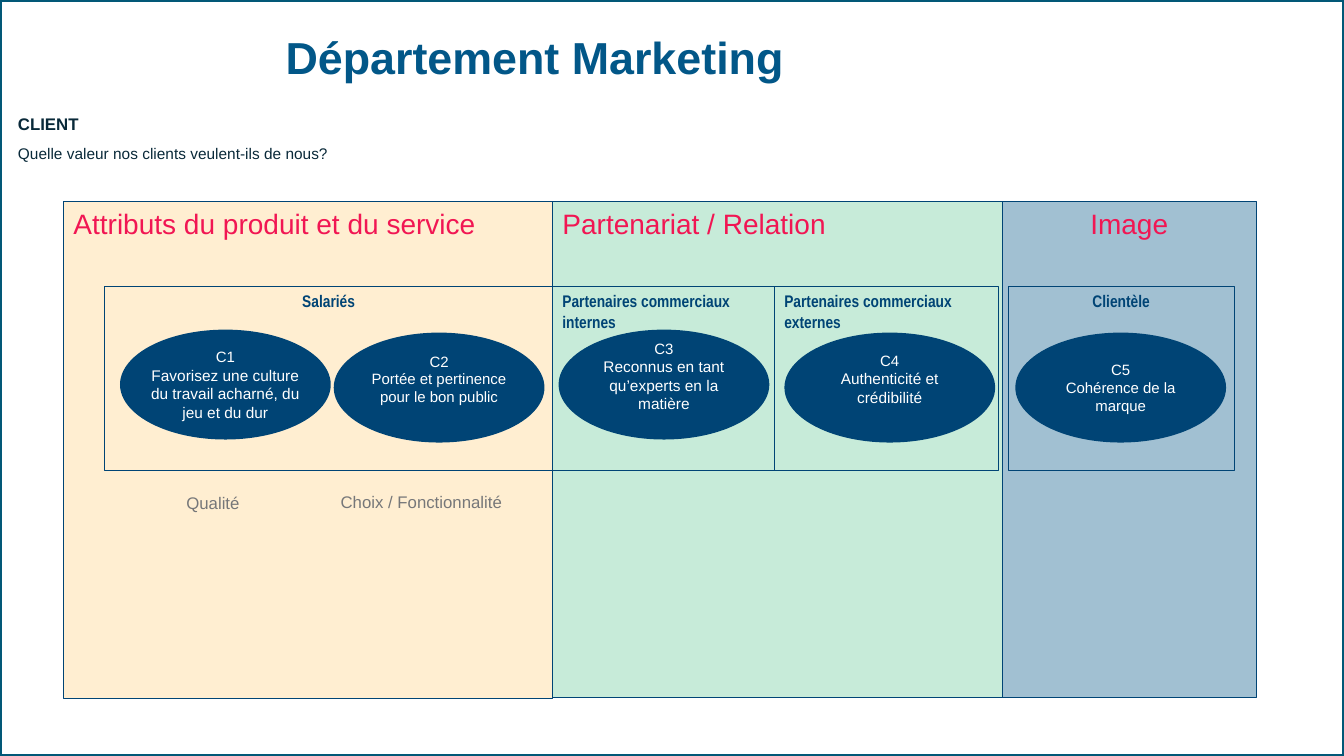
"""Build the customer value slide of the marketing department."""
import pptx
import pptx.dml.color
import pptx.enum.shapes
import pptx.enum.text
import pptx.oxml
import pptx.oxml.ns
import pptx.util

Inches = pptx.util.Inches
Pt = pptx.util.Pt
RECT = pptx.enum.shapes.MSO_SHAPE.RECTANGLE
OVAL = pptx.enum.shapes.MSO_SHAPE.OVAL
TOP = pptx.enum.text.MSO_ANCHOR.TOP
MIDDLE = pptx.enum.text.MSO_ANCHOR.MIDDLE
LEFT = pptx.enum.text.PP_ALIGN.LEFT
CENTER = pptx.enum.text.PP_ALIGN.CENTER
NAVY = "004475"


def rgb(value):
    return pptx.dml.color.RGBColor.from_string(value)


def write(sp, lines, color, align=LEFT, anchor=TOP, wrap=True, name="Arial", bold=False):
    tf = sp.text_frame
    tf.word_wrap = wrap
    tf.vertical_anchor = anchor
    for i, (text, size) in enumerate(lines):
        p = tf.add_paragraph() if i else tf.paragraphs[0]
        p.alignment = align
        r = p.add_run()
        r.text = text
        for key, value in {"name": name, "size": Pt(size), "bold": bold}.items():
            setattr(r.font, key, value)
        r.font.color.rgb = rgb(color)


prs = pptx.Presentation()
prs.slide_width = Inches(13.33)
prs.slide_height = Inches(7.5)
s = prs.slides.add_slide(prs.slide_layouts[6])

frame = s.shapes.add_shape(RECT, 0, 0, prs.slide_width, prs.slide_height)
frame.shadow.inherit = False
frame.fill.background()
frame.line.color.rgb = rgb("025877")
frame.line.width = Pt(3)

columns = [
    ("Partenariat / Relation", 5.48, 4.46, 4.92, "C7EBD9", 100, LEFT),
    ("Attributs du produit et du service", 0.63, 4.85, 4.93, "FFAA1B", 20, LEFT),
    ("Image", 9.94, 2.52, 4.92, "005687", 37, CENTER),
]
for text, x, w, h, fill, opacity, align in columns:
    sp = s.shapes.add_shape(RECT, Inches(x), Inches(2), Inches(w), Inches(h))
    sp.shadow.inherit = False
    sp.fill.solid()
    sp.fill.fore_color.rgb = rgb(fill)
    if opacity < 100:
        clr = sp.fill._xPr.find(".//" + pptx.oxml.ns.qn("a:srgbClr"))
        alpha = pptx.oxml.parse_xml(
            f'<a:alpha {pptx.oxml.ns.nsdecls("a")} val="{opacity * 1000}"/>')
        clr.append(alpha)
    sp.line.color.rgb = rgb(NAVY)
    sp.line.width = Pt(0.75)
    write(sp, [(text, 20)], "F11653", align)

groups = [
    ("Salariés", 1.04, 4.44, CENTER),
    ("Partenaires commerciaux internes", 5.48, 2.2, LEFT),
    ("Partenaires commerciaux externes", 7.68, 2.22, LEFT),
    ("Clientèle", 10, 2.24, CENTER),
]
for text, x, w, align in groups:
    sp = s.shapes.add_shape(RECT, Inches(x), Inches(2.84), Inches(w), Inches(1.83))
    sp.shadow.inherit = False
    sp.fill.background()
    sp.line.color.rgb = rgb(NAVY)
    sp.line.width = Pt(0.75)
    write(sp, [(text, 12)], NAVY, align, name="Arial Narrow", bold=True)

goals = [
    ("C1", "Favorisez une culture du travail acharné, du jeu et du dur", 11, 1.19, 3.27, 0.05),
    ("C2", "Portée et pertinence pour le bon public", 10.7, 3.31, 3.3, 0.22),
    ("C3", "Reconnus en tant qu’experts en la matière", 11, 5.54, 3.27, 0.22),
    ("C4", "Authenticité et crédibilité", 11, 7.78, 3.3, 0.22),
    ("C5", "Cohérence de la marque", 10.7, 10.07, 3.3, 0.05),
]
for code, text, size, x, y, bottom in goals:
    sp = s.shapes.add_shape(OVAL, Inches(x), Inches(y), Inches(2.09), Inches(1.09))
    sp.shadow.inherit = False
    sp.fill.solid()
    sp.fill.fore_color.rgb = rgb(NAVY)
    sp.line.fill.background()
    margins = {"margin_left": 0, "margin_right": 0, "margin_top": 0.05, "margin_bottom": bottom}
    for key, value in margins.items():
        setattr(sp.text_frame, key, Inches(value))
    write(sp, [(code, 10.7), (text, size)], "FFFFFF", CENTER, MIDDLE)

title = s.shapes.add_textbox(Inches(0.37), Inches(0.28), Inches(9.87), Inches(0.64))
write(title, [("Département Marketing", 32)], "025788", CENTER, MIDDLE, bold=True)
title.text_frame.paragraphs[0].line_spacing = 0.9

client = s.shapes.add_textbox(Inches(0.08), Inches(1.08), Inches(5.94), Inches(0.86))
write(client, [("CLIENT", 12), ("Quelle valeur nos clients veulent-ils de nous?", 11)], "092939")
heading, question = client.text_frame.paragraphs
heading.runs[0].font.bold = True
question.space_before = Pt(7)

captions = [("Qualité", 1.75, 4.84, 0.73), ("Choix / Fonctionnalité", 3.28, 4.83, 1.81)]
for text, x, y, w in captions:
    sp = s.shapes.add_textbox(Inches(x), Inches(y), Inches(w), Inches(0.3))
    write(sp, [(text, 12)], "767779", wrap=False)

prs.save("out.pptx")
